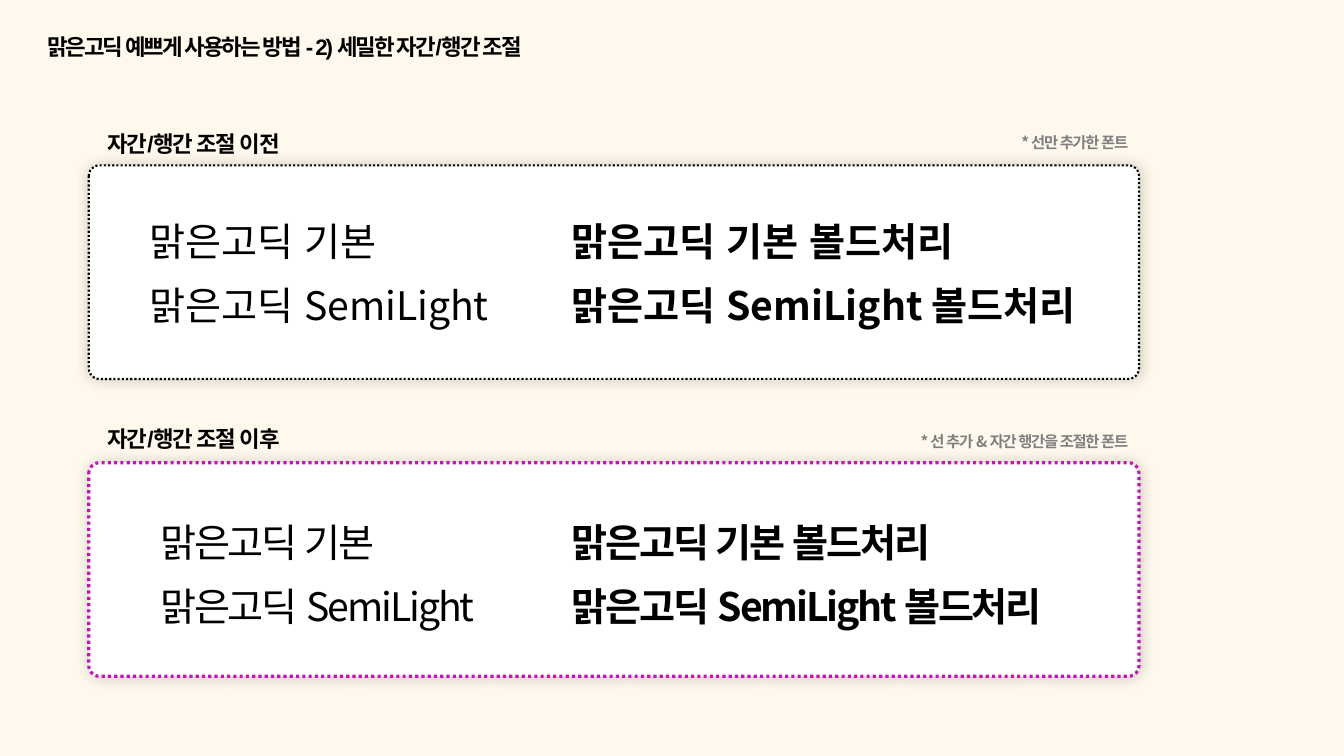
"""Build a slide that compares Korean type before and after spacing is adjusted."""
from lxml import etree
from pptx import Presentation
from pptx import util as u
from pptx.dml.color import RGBColor
from pptx.enum import dml, shapes, text
from pptx.oxml.ns import qn

COLORS = {"background": "FFF9ED", "panel": "FFFFFF", "ink": "000000",
          "accent": "C314BA", "note": "808080"}
HANGUL_FONT = "Noto Sans CJK KR"
HEADING = {"size": 16, "name": "Arial", "bold": True}
NOTE = {"size": 11, "name": HANGUL_FONT, "bold": True}
SAMPLE_FONTS = ("Arial", HANGUL_FONT)
SAMPLES = (("맑은고딕 기본", "맑은고딕 SemiLight"),
           ("맑은고딕 기본 볼드처리", "맑은고딕 SemiLight 볼드처리"))
COMPARISONS = (
    {"top": 118.1, "color": "ink", "width": 1.5, "spacing": 0,
     "heading": "자간/행간 조절 이전", "heading_top": 83.5,
     "note": "* 선만 추가한 폰트", "note_top": 87.8, "note_left": 633.6,
     "sample_top": 151.9, "lefts": (99.4, 401), "widths": (272, 386)},
    {"top": 330.5, "color": "accent", "width": 2.25, "spacing": -1.5,
     "heading": "자간/행간 조절 이후", "heading_top": 294.5,
     "note": "* 선 추가 & 자간 행간을 조절한 폰트", "note_top": 301,
     "note_left": 563.8, "sample_top": 366.5, "lefts": (107.3, 401),
     "widths": (272, 366.5)},
)
PANEL = {"left": 63.4, "width": 750.2, "height": 152.6}
NOTE_RIGHT = 813
SAMPLE_STEP = 45.7


def rgb(name):
    """Return a named colour."""
    return RGBColor.from_string(COLORS[name])


def place(shape, left, top, width, height):
    """Set the position and size of a shape in points."""
    box = {"left": left, "top": top, "width": width, "height": height}
    for name, value in box.items():
        setattr(shape, name, u.Pt(value))


def write(shape, words, style, color="ink", spacing=0, line_spacing=None,
          alignment=text.PP_ALIGN.LEFT):
    """Write one formatted paragraph into a shape."""
    frame = shape.text_frame
    frame_format = {"word_wrap": True, "vertical_anchor": text.MSO_ANCHOR.TOP,
                    "auto_size": text.MSO_AUTO_SIZE.SHAPE_TO_FIT_TEXT}
    for name, value in frame_format.items():
        setattr(frame, name, value)
    paragraph = frame.paragraphs[0]
    paragraph_format = {"alignment": alignment, "line_spacing": line_spacing,
                        "space_before": u.Pt(0)}
    for name, value in paragraph_format.items():
        setattr(paragraph, name, value)
    run = paragraph.add_run()
    run.text = words
    for name, value in {**style, "size": u.Pt(style["size"])}.items():
        setattr(run.font, name, value)
    run.font.color.rgb = rgb(color)
    properties = run.font._element
    properties.set("lang", "ko-KR")
    if spacing:
        properties.set("spc", str(round(spacing * 100)))
    etree.SubElement(properties, qn("a:ea"), typeface=HANGUL_FONT)


def add_label(slide, words, box, style, **options):
    """Add a text box with one formatted line."""
    shape = slide.shapes.add_textbox(0, 0, 0, 0)
    place(shape, *box)
    write(shape, words, style, **options)


def add_shadow(shape):
    """Give a shape a soft shadow."""
    shape.shadow.inherit = False
    effects = shape._element.spPr.find(qn("a:effectLst"))
    shadow = etree.SubElement(effects, qn("a:outerShdw"), dist="0",
                              blurRad=str(u.Pt(10)), dir=str(45 * 60000))
    color = etree.SubElement(shadow, qn("a:srgbClr"), val=COLORS["ink"])
    etree.SubElement(color, qn("a:alpha"), val="20000")


def add_panel(slide, top, color, width):
    """Add a white rounded panel with a dotted border."""
    shape = slide.shapes.add_shape(shapes.MSO_SHAPE.ROUNDED_RECTANGLE, 0, 0, 0, 0)
    place(shape, PANEL["left"], top, PANEL["width"], PANEL["height"])
    shape.adjustments[0] = 0.05
    shape.fill.solid()
    shape.fill.fore_color.rgb = rgb("panel")
    shape.line.color.rgb = rgb(color)
    line_format = {"width": u.Pt(width), "dash_style": dml.MSO_LINE.ROUND_DOT}
    for name, value in line_format.items():
        setattr(shape.line, name, value)
    add_shadow(shape)


def add_samples(slide, comparison):
    """Add the regular and bold columns of type samples."""
    for column, words_list in enumerate(SAMPLES):
        for row, words in enumerate(words_list):
            style = {"size": 28, "name": SAMPLE_FONTS[row], "bold": column == 1}
            box = (comparison["lefts"][column],
                   comparison["sample_top"] + row * SAMPLE_STEP,
                   comparison["widths"][column], 41)
            add_label(slide, words, box, style, spacing=comparison["spacing"])


def add_comparison(slide, comparison):
    """Add a panel with its heading, note and samples."""
    add_panel(slide, comparison["top"], comparison["color"], comparison["width"])
    add_label(slide, comparison["heading"],
              (69.8, comparison["heading_top"], 202.3, 32.4), HEADING,
              spacing=-1, line_spacing=1.3)
    left = comparison["note_left"]
    add_label(slide, comparison["note"],
              (left, comparison["note_top"], NOTE_RIGHT - left, 24.5), NOTE,
              color="note", spacing=-1, line_spacing=1.3,
              alignment=text.PP_ALIGN.RIGHT)
    add_samples(slide, comparison)


def main():
    """Build and save the presentation."""
    presentation = Presentation()
    presentation.slide_width = u.Pt(960)
    presentation.slide_height = u.Pt(540)
    slide = presentation.slides.add_slide(presentation.slide_layouts[5])
    slide.background.fill.solid()
    slide.background.fill.fore_color.rgb = rgb("background")
    title = slide.shapes.title
    place(title, 26.6, 20.2, 418.3, 26.6)
    write(title, "맑은고딕 예쁘게 사용하는 방법 - 2) 세밀한 자간/행간 조절",
          HEADING, spacing=-1.5)
    for comparison in COMPARISONS:
        add_comparison(slide, comparison)
    presentation.save("out.pptx")


if __name__ == "__main__":
    main()
